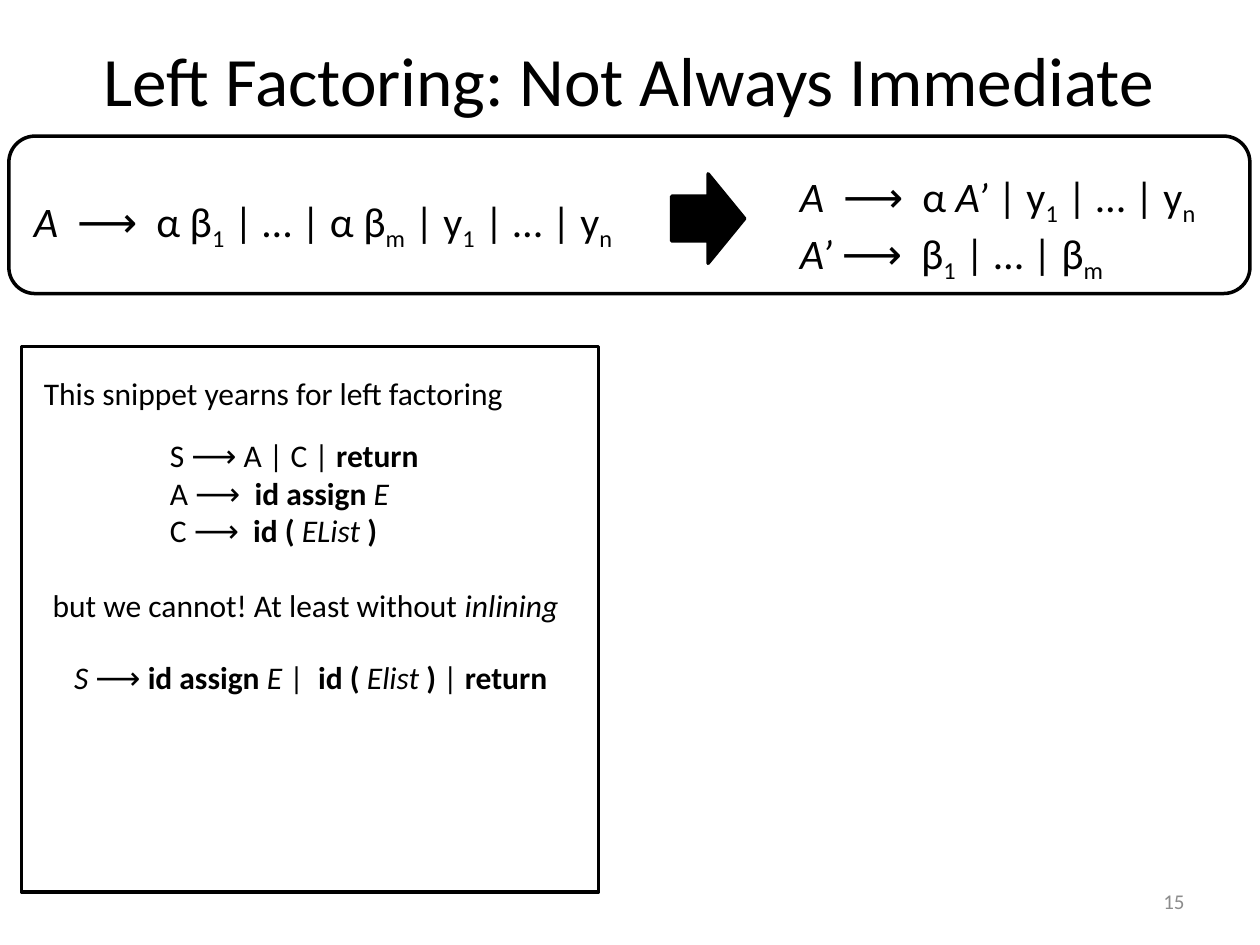
import pptx
import pptx.util
import pptx.dml.color
import pptx.enum.shapes
import pptx.enum.text

Inches = pptx.util.Inches
SHAPES = pptx.enum.shapes.MSO_SHAPE
ALIGN = pptx.enum.text.PP_ALIGN
ANCHOR = pptx.enum.text.MSO_ANCHOR
COLORS = {"ink": "000000", "paper": "FFFFFF", "muted": "8C8C8C"}


def color(name):
    return pptx.dml.color.RGBColor.from_string(COLORS[name])


def add_outline(page, kind, left, top, width, height, fill="paper"):
    shape = page.shapes.add_shape(
        kind, Inches(left), Inches(top), Inches(width), Inches(height))
    shape.shadow.inherit = False
    shape.fill.solid()
    shape.fill.fore_color.rgb = color(fill)
    shape.line.color.rgb = color("ink")
    shape.line.width = pptx.util.Pt(2)


def add_text(page, lines, left, top, width, height, size=18, ink="ink",
             align=ALIGN.LEFT, anchor=ANCHOR.TOP, wrap=True):
    box = page.shapes.add_textbox(
        Inches(left), Inches(top), Inches(width), Inches(height))
    frame = box.text_frame
    frame.word_wrap = wrap
    frame.vertical_anchor = anchor
    for index, spans in enumerate(lines):
        para = frame.add_paragraph() if index else frame.paragraphs[0]
        para.alignment = align
        for text, style in spans:
            span = para.add_run()
            span.text = text
            span.font.name = "Calibri"
            span.font.size = pptx.util.Pt(size)
            span.font.color.rgb = color(ink)
            span.font.bold = style == "bold"
            span.font.italic = style == "italic"
            if style == "sub":
                span._r.get_or_add_rPr().set("baseline", "-25000")


def series(symbol, last, prefix=""):
    return [(f"{prefix}{symbol}", ""), ("1", "sub"),
            (f" | … | {symbol}", ""), (last, "sub")]


def add_title(page, left, top, width, height):
    add_text(page, [[("Left Factoring: Not Always Immediate", "")]],
             left, top, width, height, size=39.6,
             align=ALIGN.CENTER, anchor=ANCHOR.MIDDLE)


def add_rule_panel(page, left, top, width, height):
    add_outline(page, SHAPES.ROUNDED_RECTANGLE, left, top, width, height)
    before = [("A", "italic"), ("  ⟶  ", ""),
              *series("α β", "m"), *series("y", "n", " | ")]
    after = [
        [("A", "italic"), ("  ⟶  α ", ""), ("A’", "italic"),
         *series("y", "n", " | ")],
        [("A’", "italic"), *series("β", "m", " ⟶  ")[:2],
         *series("β", "m")[2:]],
    ]
    add_text(page, [before], left + 0.1, top + 0.42, 4.92, 0.5, size=24)
    add_text(page, after, left + 6.18, top + 0.22, 3.5, 0.91, size=24)
    add_outline(page, SHAPES.RIGHT_ARROW, left + 5.26, top + 0.3,
                0.58, 0.71, fill="ink")


def add_example_panel(page, left, top, width, height):
    add_outline(page, SHAPES.RECTANGLE, left, top, width, height)
    assignment = [("id assign ", "bold"), ("E", "italic")]

    def call(name):
        return [("id ( ", "bold"), (f"{name} ", "italic"), (")", "bold")]

    grammar = [
        [("S ⟶ A | C | ", ""), ("return", "bold")],
        [("A ⟶  ", ""), *assignment],
        [("C ⟶  ", ""), *call("EList")],
    ]
    inlined = [("S", "italic"), (" ⟶ ", ""), *assignment, (" |  ", ""),
               *call("Elist"), (" | ", ""), ("return", "bold")]
    add_text(page, [[("This snippet yearns for left factoring", "")]],
             left + 0.08, top + 0.17, 3.97, 0.4, wrap=False)
    add_text(page, grammar, left + 1.08, top + 0.66, 2.33, 1.01)
    add_text(page, [[("but we cannot! At least without ", ""),
                     ("inlining", "italic")]],
             left + 0.15, top + 1.85, 4.26, 0.4, wrap=False)
    add_text(page, [inlined], left + 0.32, top + 2.42, 4.09, 0.4)


def add_page_number(page, left, top, width, height):
    add_text(page, [[("15", "")]], left, top, width, height, size=12,
             ink="muted", align=ALIGN.RIGHT, anchor=ANCHOR.MIDDLE)


def main():
    deck = pptx.Presentation()
    deck.slide_width = Inches(10)
    deck.slide_height = Inches(7.5)
    page = deck.slides.add_slide(deck.slide_layouts[6])
    add_example_panel(page, 0.17, 2.75, 4.58, 4.33)
    add_rule_panel(page, 0.07, 1.08, 9.85, 1.25)
    add_title(page, 0.33, 0, 9.33, 1.25)
    add_page_number(page, 7.17, 6.95, 2.33, 0.4)
    deck.save("out.pptx")


if __name__ == "__main__":
    main()
